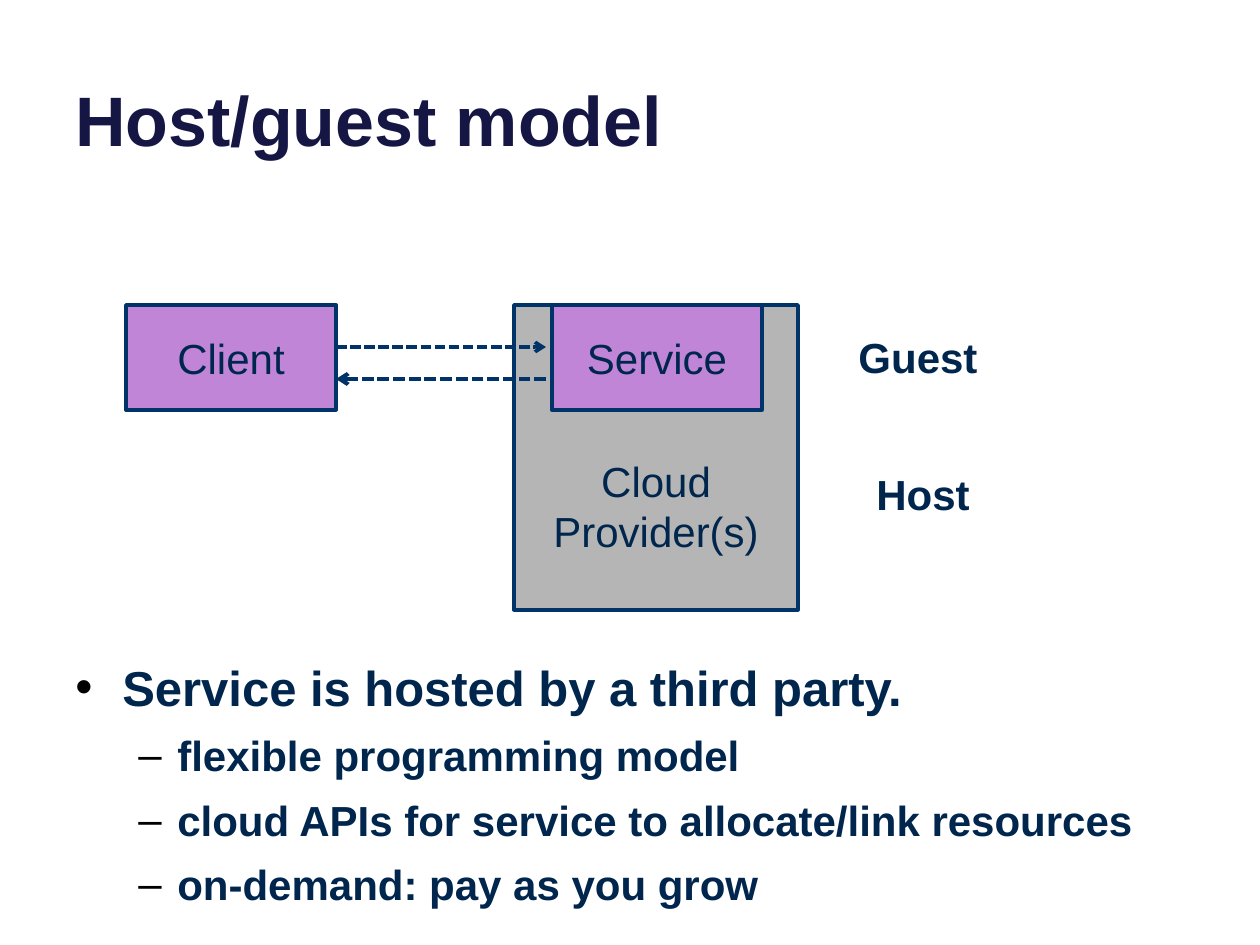
import lxml.etree
import pptx
import pptx.dml.color
import pptx.enum.dml
import pptx.enum.shapes
import pptx.enum.text
import pptx.oxml.ns
import pptx.util

PX = 914400 / 126
COLORS = {"text": "00264D", "title": "161645", "line": "003367",
          "host": "B5B5B5", "guest": "C085D7", "bullet": "000000"}
ALIGN = pptx.enum.text.PP_ALIGN
ANCHOR = pptx.enum.text.MSO_ANCHOR
qn = pptx.oxml.ns.qn


def px(*lengths):
    return [pptx.util.Emu(round(length * PX)) for length in lengths]


def write(paragraph, text, size=24, bold=False, color="text", align=ALIGN.CENTER):
    paragraph.alignment = align
    run = paragraph.add_run()
    run.text = text
    run.font.name = "Arial"
    run.font.size = pptx.util.Pt(size)
    run.font.bold = bold
    run.font.color.rgb = pptx.dml.color.RGBColor.from_string(COLORS[color])


deck = pptx.Presentation()
deck.slide_width, deck.slide_height = px(1260, 945)
slide = deck.slides.add_slide(deck.slide_layouts[6])

boxes = [
    ("Cloud Provider(s)", "host", (514, 305, 284, 305), 103),
    ("Client", "guest", (126, 305, 210, 105), 6),
    ("Service", "guest", (552, 305, 210, 105), 6),
]
for label, fill, place, top_inset in boxes:
    box = slide.shapes.add_shape(pptx.enum.shapes.MSO_SHAPE.RECTANGLE, *px(*place))
    box.shadow.inherit = False
    box.fill.solid()
    box.fill.fore_color.rgb = pptx.dml.color.RGBColor.from_string(COLORS[fill])
    box.line.color.rgb = pptx.dml.color.RGBColor.from_string(COLORS["line"])
    box.line.width = pptx.util.Pt(2)
    box.text_frame.word_wrap = True
    box.text_frame.vertical_anchor = ANCHOR.MIDDLE
    box.text_frame.margin_top = px(top_inset)[0]
    write(box.text_frame.paragraphs[0], label)

for role, place in [("Host", (863, 462, 120, 64)), ("Guest", (845, 325, 146, 64))]:
    role_label = slide.shapes.add_textbox(*px(*place))
    role_label.text_frame.word_wrap = False
    role_label.text_frame.auto_size = pptx.enum.text.MSO_AUTO_SIZE.SHAPE_TO_FIT_TEXT
    write(role_label.text_frame.paragraphs[0], role, bold=True)

for start, end, y, width in [(336, 546, 347, 2), (546, 336, 379, 2.25)]:
    message = slide.shapes.add_connector(
        pptx.enum.shapes.MSO_CONNECTOR.STRAIGHT, *px(start, y, end, y))
    message.line.color.rgb = pptx.dml.color.RGBColor.from_string(COLORS["line"])
    message.line.width = pptx.util.Pt(width)
    message.line.dash_style = pptx.enum.dml.MSO_LINE.SQUARE_DOT
    properties = message._element.spPr
    lxml.etree.SubElement(properties.find(qn("a:ln")), qn("a:tailEnd"), type="arrow")
    lxml.etree.SubElement(properties, qn("a:effectLst"))

title = slide.shapes.add_textbox(*px(63, -47, 1134, 214)).text_frame
title.word_wrap = True
title.vertical_anchor = ANCHOR.BOTTOM
write(title.paragraphs[0], "Host/guest model", size=40, bold=True,
      color="title", align=ALIGN.LEFT)

points = [
    (0, "Service is hosted by a third party."),
    (1, "flexible programming model"),
    (1, "cloud APIs for service to allocate/link resources"),
    (1, "on-demand: pay as you grow"),
]
levels = [("•", 28, 9, 47, -47), ("–", 24, 8, 102, -39)]
body = slide.shapes.add_textbox(*px(63, 651, 1134, 567)).text_frame
body.word_wrap = True
for index, (level, text) in enumerate(points):
    bullet, size, space, margin, indent = levels[level]
    point = body.add_paragraph() if index else body.paragraphs[0]
    point.level = level
    point.space_before = pptx.util.Pt(space)
    write(point, text, size=size, bold=True, align=ALIGN.LEFT)
    layout = point._p.get_or_add_pPr()
    layout.set("marL", str(px(margin)[0]))
    layout.set("indent", str(px(indent)[0]))
    bullet_color = lxml.etree.SubElement(layout, qn("a:buClr"))
    lxml.etree.SubElement(bullet_color, qn("a:srgbClr"), val=COLORS["bullet"])
    lxml.etree.SubElement(layout, qn("a:buFont"), typeface="Arial")
    lxml.etree.SubElement(layout, qn("a:buChar"), char=bullet)

deck.save("out.pptx")
